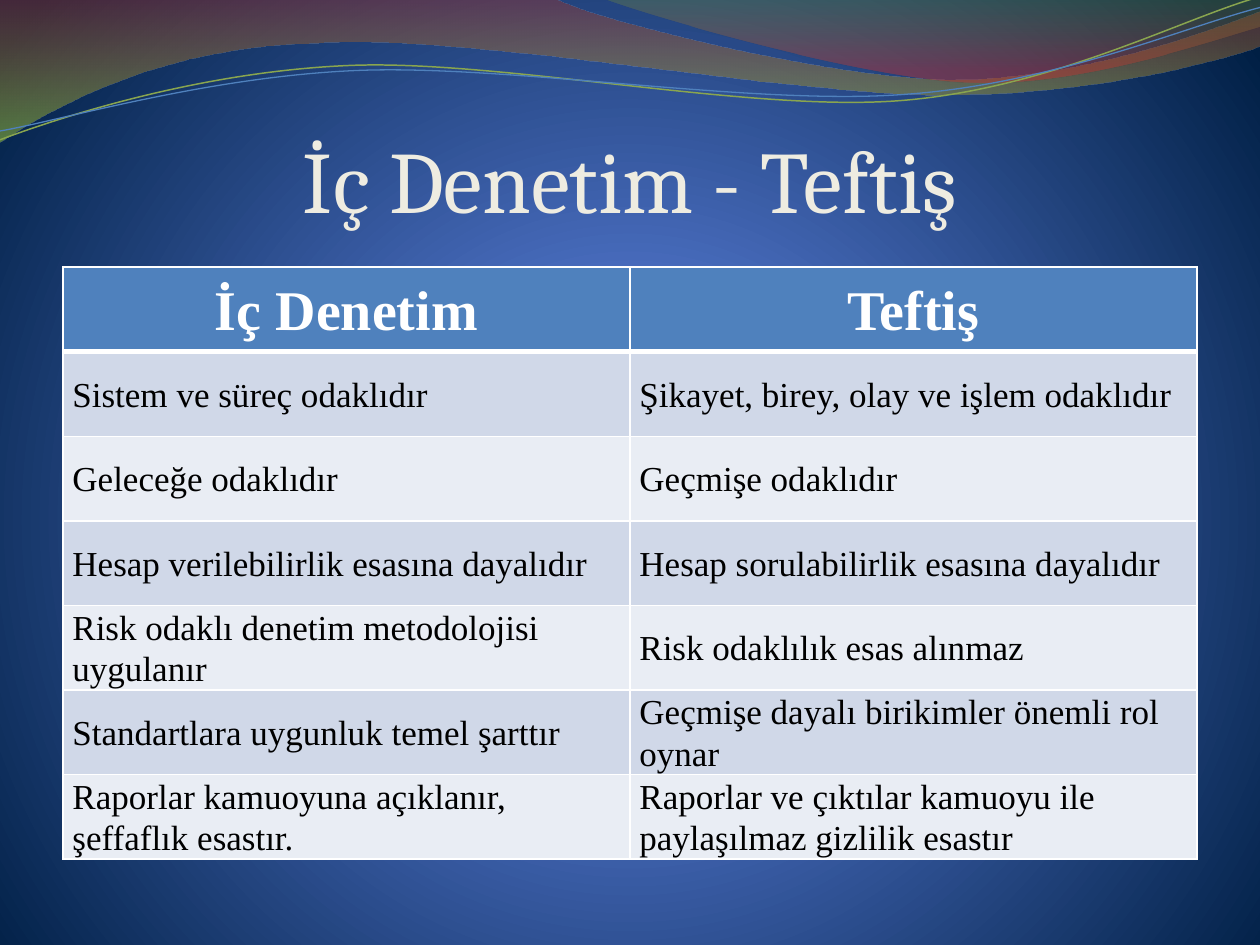
from math import cos, radians, sin
from pptx import Presentation
from pptx.dml.color import RGBColor as RGB
from pptx.enum.text import MSO_ANCHOR as Anchor, PP_ALIGN as Align
from pptx.oxml import parse_xml
from pptx.oxml.ns import nsdecls
from pptx.util import Inches, Pt

WHITE = RGB(0xFF, 0xFF, 0xFF)
BLACK = RGB(0, 0, 0)
CREAM = RGB(0xEE, 0xEC, 0xE1)
BLUE = RGB(0x4F, 0x81, 0xBD)
GREEN = RGB(0x89, 0xA5, 0x4F)
BANDS = RGB(0xD0, 0xD8, 0xE8), RGB(0xE9, 0xED, 0xF4)
SKY, MID, NAVY = RGB(0x4D, 0x75, 0xD6), RGB(0x4E, 0x72, 0xC7), RGB(0, 0x1F, 0x44)
RUST, LIME = RGB(0x97, 0x33, 0x30), RGB(0x95, 0xC2, 0x38)
OLIVE, RED = RGB(0x76, 0x95, 0x37), RGB(0xBE, 0x33, 0x30)

TITLE = "İç Denetim - Teftiş"
ROWS = [
    ("İç Denetim", "Teftiş"),
    ("Sistem ve süreç odaklıdır", "Şikayet, birey, olay ve işlem odaklıdır"),
    ("Geleceğe odaklıdır", "Geçmişe odaklıdır"),
    ("Hesap verilebilirlik esasına dayalıdır", "Hesap sorulabilirlik esasına dayalıdır"),
    ("Risk odaklı denetim metodolojisi uygulanır", "Risk odaklılık esas alınmaz"),
    ("Standartlara uygunluk temel şarttır", "Geçmişe dayalı birikimler önemli rol oynar"),
    ("Raporlar kamuoyuna açıklanır, şeffaflık esastır.",
     "Raporlar ve çıktılar kamuoyu ile paylaşılmaz gizlilik esastır"),
]
DOWN = '<a:lin ang="5400000" scaled="0"/>'
GLOW = ('<a:path path="circle"><a:fillToRect l="10000" t="110000" '
        'r="10000" b="100000"/></a:path>')
SKIES = [(0, SKY, 100), (25, MID, 100), (100, NAVY, 100)]
WAVES = [
    ([(0, 0), (4.4, -0.01), (4.76, 0.17, 6.64, 0.63, 7.58, 0.63),
      (8.53, 0.63, 9.58, 0.26, 10, 0.09), (10.01, 0.36),
      (9.83, 0.44, 8.7, 0.76, 7.46, 0.75), (6.22, 0.75, 3.82, 0.28, 2.57, 0.34),
      (1.29, 0.36, 0.46, 0.83, -0.01, 1.13), (0, 0)],
     [(0, RUST, 45), (100, LIME, 55)]),
    ([(4.79, -0.01), (5.09, 0.11, 6.82, 0.62, 7.69, 0.65),
      (8.56, 0.69, 9.61, 0.32, 10, 0.21), (10, 0), (4.79, -0.01)],
     [(0, OLIVE, 30), (80, RED, 45)]),
]
TURN = -2.7
CURVES = [
    ([(0, 1.11), (0.48, 0.93, 1.58, 0.57, 2.77, 0.52),
      (3.95, 0.47, 5.93, 0.89, 7.13, 0.8), (8.33, 0.71, 9.38, 0.15, 9.98, -0.02)],
     (4.99, 0.58), GREEN, 0.85),
    ([(0, 1.04), (0.47, 0.96, 1.64, 0.61, 2.83, 0.56),
      (4.03, 0.51, 5.97, 0.84, 7.17, 0.75), (8.36, 0.67, 9.41, 0.21, 10, 0.06)],
     (5, 0.59), BLUE, 0.75),
]


def blend(solid, stops, kind):
    marks = "".join(
        f'<a:gs pos="{pos * 1000}"><a:srgbClr val="{tint}">'
        f'<a:alpha val="{alpha * 1000}"/></a:srgbClr></a:gs>'
        for pos, tint, alpha in stops)
    grad = parse_xml(f'<a:gradFill {nsdecls("a")} rotWithShape="1">'
                     f'<a:gsLst>{marks}</a:gsLst>{kind}</a:gradFill>')
    solid.getparent().replace(solid, grad)


def level(seg, mid):
    c, s = cos(radians(-TURN)), sin(radians(-TURN))
    out = []
    for x, y in zip(seg[::2], seg[1::2]):
        dx, dy = x - mid[0], y - mid[1]
        out += [mid[0] + dx * c - dy * s, mid[1] + dx * s + dy * c]
    return out


def draw(shapes, segs, close):
    dots = [(Inches(x), Inches(y)) for seg in segs
            for x, y in zip(seg[::2], seg[1::2])]
    pen = shapes.build_freeform(*dots[0])
    pen.add_line_segments(dots[1:], close=close)
    shape = pen.convert_to_shape()
    shape.shadow.inherit = False
    lines = iter(shape._element.xpath(".//a:lnTo"))
    for seg in segs[1:]:
        first = next(lines)
        if len(seg) == 6:
            bend = parse_xml(f'<a:cubicBezTo {nsdecls("a")}/>')
            first.addprevious(bend)
            for line in (first, next(lines), next(lines)):
                bend.append(line[0])
                line.getparent().remove(line)
    return shape


def style(para, align, size, face, tint, bold=False):
    para.alignment = align
    for name, value in {"size": Pt(size), "name": face, "bold": bold}.items():
        setattr(para.runs[0].font, name, value)
    para.runs[0].font.color.rgb = tint


def border(cell, head):
    for side in "LRTB":
        width = Pt(3 if head and side == "B" else 1)
        cell._tc.get_or_add_tcPr().append(parse_xml(
            f'<a:ln{side} {nsdecls("a")} w="{width}"><a:solidFill>'
            f'<a:srgbClr val="{WHITE}"/></a:solidFill></a:ln{side}>'))


def main():
    deck = Presentation()
    deck.slide_width, deck.slide_height = Inches(10), Inches(7.5)
    slide = deck.slides.add_slide(deck.slide_layouts[5])
    shapes = slide.shapes

    slide.background.fill.solid()
    blend(slide._element.xpath(".//p:bgPr/a:solidFill")[0], SKIES, GLOW)

    for segs, stops in WAVES:
        wave = draw(shapes, segs, True)
        wave.line.fill.background()
        wave.fill.solid()
        blend(wave._element.spPr.find("{*}solidFill"), stops, DOWN)
    for segs, mid, tint, width in CURVES:
        curve = draw(shapes, [level(seg, mid) for seg in segs], False)
        spot = curve.left + curve.width / 2, curve.top + curve.height / 2
        goal = level([Inches(1) * 0 + v / Inches(1) for v in spot], mid)
        back = [2 * v / Inches(1) - g for v, g in zip(spot, goal)]
        curve.left += Inches(back[0]) - round(spot[0])
        curve.top += Inches(back[1]) - round(spot[1])
        curve.rotation = TURN
        curve.fill.background()
        curve.line.color.rgb = tint
        curve.line.width = Pt(width)

    title = shapes.title
    shapes._spTree.append(title._element)
    box = {"left": 0.5, "top": 0.77, "width": 9, "height": 1.25}
    for name, value in box.items():
        setattr(title, name, Inches(value))
    frame = title.text_frame
    frame.text = TITLE
    pads = {"margin_left": 0, "margin_top": Inches(0.05), "margin_right": 0,
            "margin_bottom": 0, "vertical_anchor": Anchor.MIDDLE}
    for name, value in pads.items():
        setattr(frame, name, value)
    style(frame.paragraphs[0], Align.CENTER, 50, "Cambria", CREAM)

    holder = shapes.add_table(len(ROWS), 2, Inches(0.5), Inches(2.12),
                              Inches(9), Inches(4.7))
    holder.height = Inches(4.83)
    inset = {"margin_left": Pt(5.4), "margin_right": Pt(5.4),
             "margin_top": 0, "margin_bottom": 0, "vertical_anchor": Anchor.MIDDLE}
    for r, row in enumerate(ROWS):
        head = r == 0
        for c, text in enumerate(row):
            cell = holder.table.cell(r, c)
            cell.text = text
            for name, value in inset.items():
                setattr(cell, name, value)
            border(cell, head)
            cell.fill.solid()
            cell.fill.fore_color.rgb = BLUE if head else BANDS[(r - 1) % 2]
            para = cell.text_frame.paragraphs[0]
            para.line_spacing = 1.07
            style(para, Align.CENTER if head else Align.LEFT, 32 if head else 20,
                  "Times New Roman", WHITE if head else BLACK, head)

    deck.save("out.pptx")


if __name__ == "__main__":
    main()
